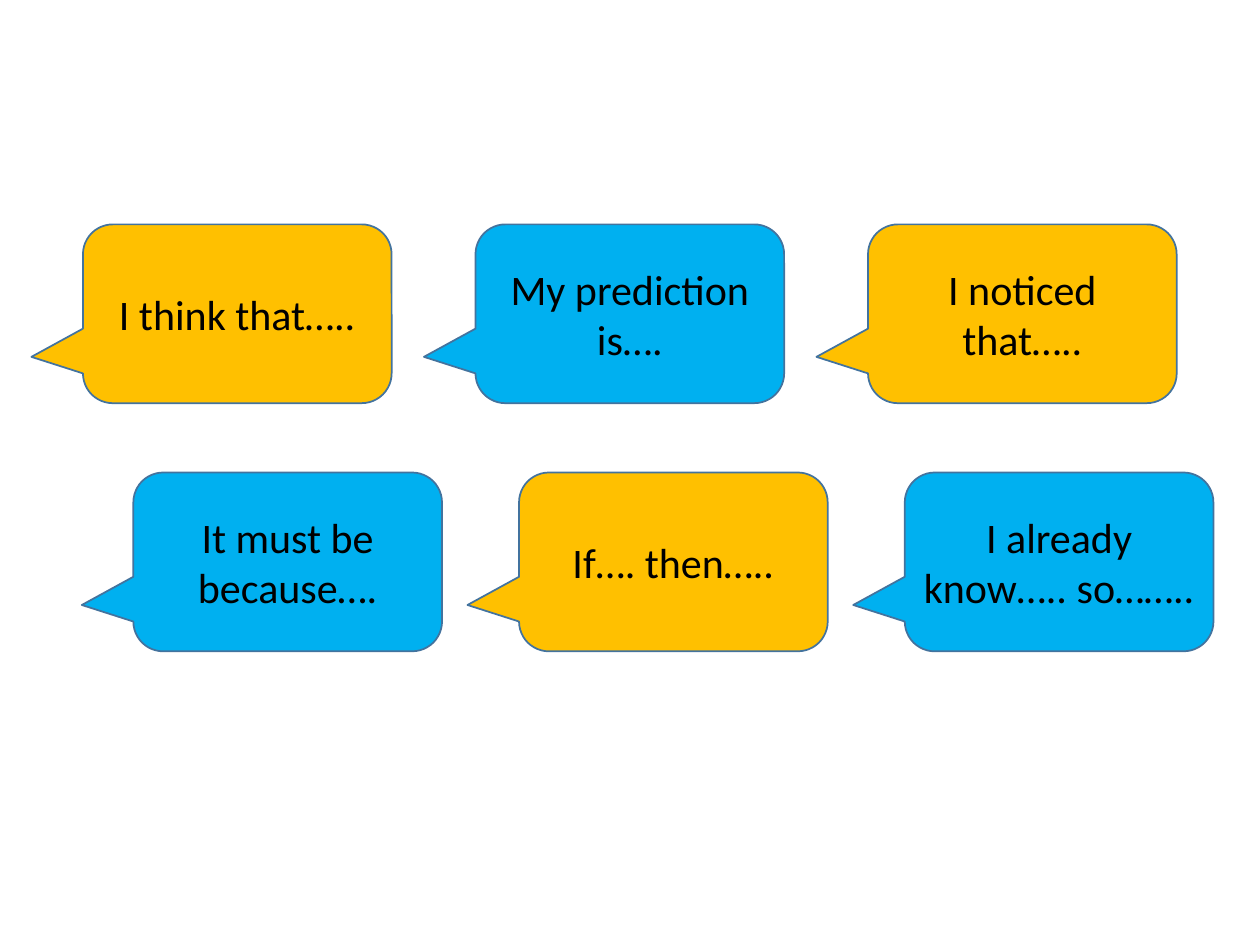
from dataclasses import dataclass

from pptx import Presentation
from pptx.dml.color import RGBColor as RGB
from pptx.enum.shapes import MSO_SHAPE as Shape
from pptx.enum.text import MSO_ANCHOR as Anchor, PP_ALIGN as Align
from pptx.util import Pt

ROWS = [
    {"left": 47.4, "top": 128.2, "step": 224.3,
     "starters": ["I think that…..", "My prediction is….", "I noticed that….."]},
    {"left": 76.2, "top": 270, "step": 220.4,
     "starters": ["It must be because….", "If…. then…..", "I already know….. so…….."]},
]
BUBBLE_W, BUBBLE_H = 176.4, 102.2
TAIL = (-0.667, 0.241, 0.167)
INSET_X, TIGHT_INSET_X, INSET_Y = 7.2, 2.9, 3.6
LONG_STARTER = 20


@dataclass(frozen=True)
class Theme:
    fills: tuple = (RGB(0xFF, 0xC0, 0x00), RGB(0x00, 0xB0, 0xF0))
    outline: RGB = RGB(0x43, 0x73, 0x9E)
    text: RGB = RGB(0, 0, 0)
    font: str = "Calibri"
    size: int = 24
    line: int = 1


THEME = Theme()


def add_bubble(slide, left, top, text, fill):
    s = slide.shapes.add_shape(Shape.ROUNDED_RECTANGULAR_CALLOUT,
                               Pt(left), Pt(top), Pt(BUBBLE_W), Pt(BUBBLE_H))
    for i, value in enumerate(TAIL):
        s.adjustments[i] = value
    s.shadow.inherit = False
    s.fill.solid()
    s.fill.fore_color.rgb = fill
    s.line.color.rgb = THEME.outline
    s.line.width = Pt(THEME.line)
    tf = s.text_frame
    tf.word_wrap = True
    tf.vertical_anchor = Anchor.MIDDLE
    inset = TIGHT_INSET_X if len(text) > LONG_STARTER else INSET_X
    tf.margin_left = tf.margin_right = Pt(inset)
    tf.margin_top = tf.margin_bottom = Pt(INSET_Y)
    p = tf.paragraphs[0]
    p.text = text
    p.alignment = Align.CENTER
    p.font.name = THEME.font
    p.font.size = Pt(THEME.size)
    p.font.color.rgb = THEME.text


def main():
    prs = Presentation()
    prs.slide_width, prs.slide_height = Pt(720), Pt(540)
    slide = prs.slides.add_slide(prs.slide_layouts[6])
    for r, row in enumerate(ROWS):
        for c, text in enumerate(row["starters"]):
            add_bubble(slide, row["left"] + c * row["step"], row["top"],
                       text, THEME.fills[(r + c) % 2])
    prs.save("out.pptx")


if __name__ == "__main__":
    main()
